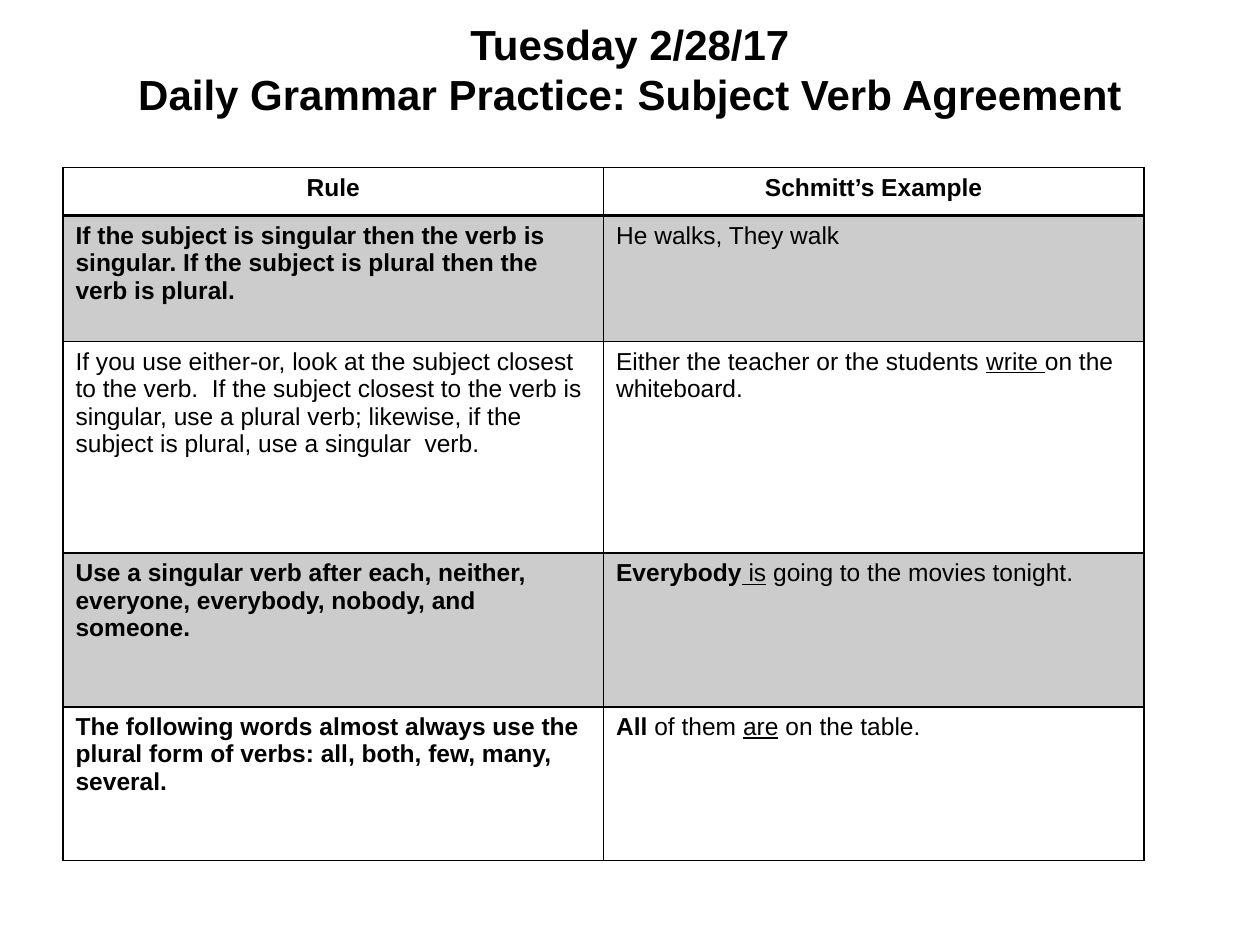
"""Build a grammar practice slide with a table of rules and examples."""
from lxml import etree
from pptx import Presentation
from pptx.dml.color import RGBColor
from pptx.enum import text as tx
from pptx.oxml import ns
from pptx.util import Inches, Pt

INK = "000000"
TITLE = "Tuesday 2/28/17\vDaily Grammar Practice: Subject Verb Agreement"
ROWS = [
    (0.38, [("Rule", "b")], [("Schmitt’s Example", "b")]),
    (1, [("If the subject is singular then the verb is singular. "
          "If the subject is plural then the verb is plural.", "b")],
     [("He walks, They walk", "")]),
    (1.68, [("If you use either-or, look at the subject closest to the verb.  "
             "If the subject closest to the verb is singular, use a plural verb; "
             "likewise, if the subject is plural, use a singular  verb.", "")],
     [("Either the teacher or the students ", ""), ("write ", "u"),
      ("on the whiteboard.", "")]),
    (1.22, [("Use a singular verb after each, neither, everyone, everybody, "
             "nobody, and someone.", "b")],
     [("Everybody", "b"), (" is", "u"), (" going to the movies tonight.", "")]),
    (1.22, [("The following words almost always use the plural form of verbs: "
             "all, both, few, many, several.", "b")],
     [("All", "b"), (" of them ", ""), ("are", "u"), (" on the table.", "")]),
]
WIDE = 4.29


def paint(color, code):
    color.rgb = RGBColor.from_string(code)


def style(font, size, marks):
    font.name, font.size = "Arial", Pt(size)
    font.bold = "b" in marks
    font.underline = "u" in marks
    paint(font.color, INK)


def sub(node, tag, **attrs):
    return etree.SubElement(node, ns.qn(tag), **attrs)


def border(cell, row):
    props = cell._tc.get_or_add_tcPr()
    thick = {"T": row == 1, "B": row == 0}
    for side in "LRTB":
        width = Pt(2 if thick.get(side) else 1)
        line = sub(props, f"a:ln{side}", w=str(width))
        sub(sub(line, "a:solidFill"), "a:srgbClr", val=INK)


def shade(cell, row):
    if row % 2 == 0:
        cell.fill.background()
        return
    cell.fill.solid()
    paint(cell.fill.fore_color, INK)
    tint = cell._tc.tcPr.find(ns.qn("a:solidFill"))[0]
    sub(tint, "a:alpha", val="20000")


def write(cell, runs, row):
    para = cell.text_frame.paragraphs[0]
    para.alignment = tx.PP_ALIGN.LEFT if row else tx.PP_ALIGN.CENTER
    for words, marks in runs:
        run = para.add_run()
        run.text = words
        style(run.font, 14, marks)


def head(slide):
    box = slide.shapes.add_textbox(Inches(0.5), Inches(-0.08), Inches(9), Inches(1.25))
    frame = box.text_frame
    frame.word_wrap = True
    frame.vertical_anchor = tx.MSO_ANCHOR.MIDDLE
    frame.margin_left = frame.margin_right = Inches(0.1)
    frame.margin_top = frame.margin_bottom = Inches(0.1)
    para = frame.paragraphs[0]
    para.text = TITLE
    para.alignment = tx.PP_ALIGN.CENTER
    for run in para.runs:
        style(run.font, 24, "b")


def grid(slide):
    tall = sum(row[0] for row in ROWS)
    table = slide.shapes.add_table(
        len(ROWS), 2, Inches(0.5), Inches(1.33), Inches(2 * WIDE), Inches(tall)).table
    for col in table.columns:
        col.width = Inches(WIDE)
    for i, (high, *cells) in enumerate(ROWS):
        table.rows[i].height = Inches(high)
        for j, runs in enumerate(cells):
            cell = table.cell(i, j)
            border(cell, i)
            shade(cell, i)
            write(cell, runs, i)


def main():
    deck = Presentation()
    deck.slide_width, deck.slide_height = Inches(10), Inches(7.5)
    slide = deck.slides.add_slide(deck.slide_layouts[6])
    head(slide)
    grid(slide)
    deck.save("out.pptx")


if __name__ == "__main__":
    main()
